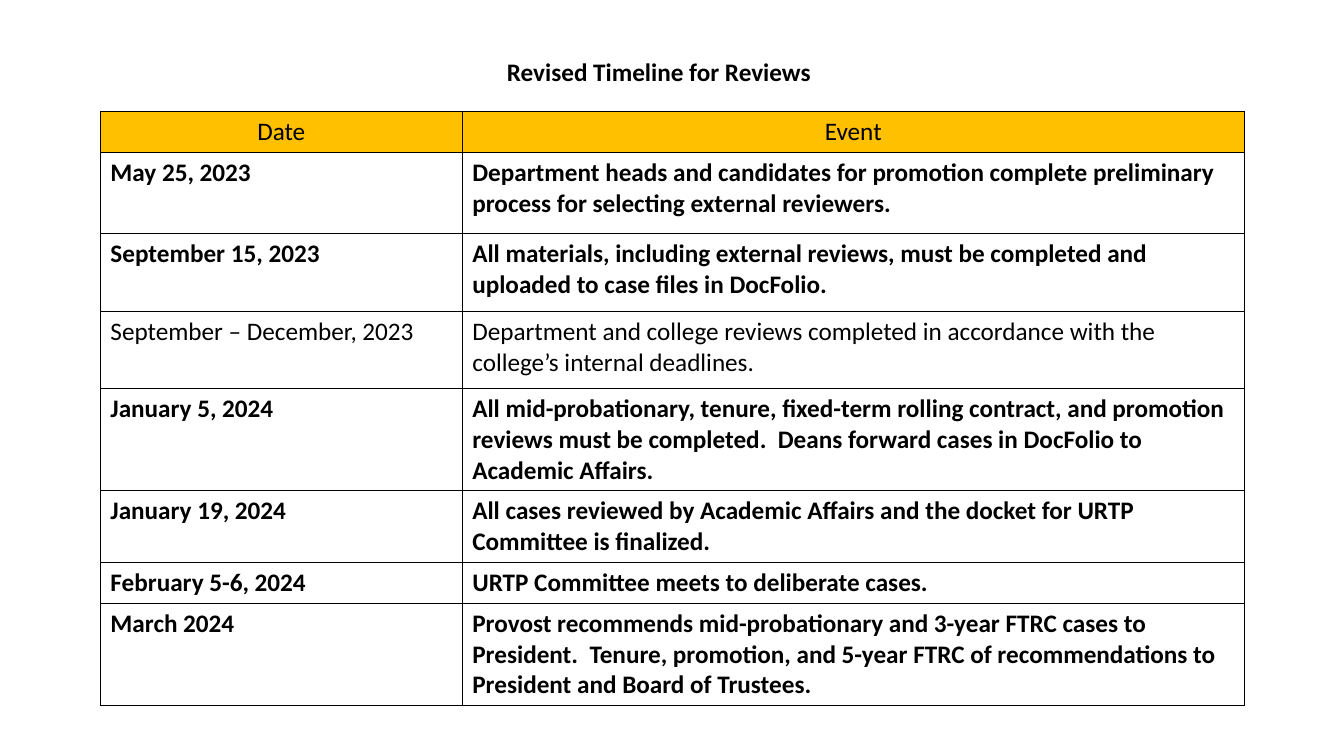
from lxml.etree import SubElement as Sub
from pptx import Presentation
from pptx.dml.color import RGBColor as Rgb
from pptx.enum.text import MSO_ANCHOR as Anchor, PP_ALIGN as Align
from pptx.oxml.ns import qn
from pptx.util import Cm, Pt

HEAD = ("Date", "Event")
# date, event, bold, row height in cm
ROWS = [
    ("May 25, 2023",
     "Department heads and candidates for promotion complete preliminary "
     "process for selecting external reviewers.", True, 2.04),
    ("September 15, 2023",
     "All materials, including external reviews, must be completed and "
     "uploaded to case files in DocFolio.", True, 1.97),
    ("September – December, 2023",
     "Department and college reviews completed in accordance with the "
     "college’s internal deadlines.", False, 1.94),
    ("January 5, 2024",
     "All mid-probationary, tenure, fixed-term rolling contract, and "
     "promotion reviews must be completed.  Deans forward cases in DocFolio "
     "to Academic Affairs.", True, 2.56),
    ("January 19, 2024",
     "All cases reviewed by Academic Affairs and the docket for URTP "
     "Committee is finalized.", True, 1.8),
    ("February 5-6, 2024",
     "URTP Committee meets to deliberate cases.", True, 1.03),
    ("March 2024",
     "Provost recommends mid-probationary and 3-year FTRC cases to "
     "President.  Tenure, promotion, and 5-year FTRC of recommendations to "
     "President and Board of Trustees.", True, 2.56),
]


def color(code):
    return Rgb.from_string(code)


class Deck:
    font, size = "Calibri", Pt(18)
    ink, gold = "000000", "FFC000"

    def __init__(self, slide):
        self.slide = slide

    def text(self, frame, words, bold=False, align=Align.LEFT):
        para = frame.paragraphs[0]
        para.alignment = align
        run = para.add_run()
        run.text = words
        font = run.font
        font.name, font.size, font.bold = self.font, self.size, bold
        font.color.rgb = color(self.ink)

    def title(self, words, left, top, width, height):
        shape = self.slide.shapes.title
        shape.left, shape.top = Cm(left), Cm(top)
        shape.width, shape.height = Cm(width), Cm(height)
        frame = shape.text_frame
        frame.word_wrap = False
        frame.vertical_anchor = Anchor.TOP
        self.text(frame, words, bold=True)

    def border(self, cell):
        """Draw a 1 pt line on all four sides of a cell."""
        props = cell._tc.get_or_add_tcPr()
        for spot, side in enumerate(("lnL", "lnR", "lnT", "lnB")):
            line = Sub(props, qn(f"a:{side}"), w=str(Pt(1)))
            fill = Sub(line, qn("a:solidFill"))
            Sub(fill, qn("a:srgbClr"), val=self.ink)
            props.insert(spot, line)

    def cell(self, cell, words, bold, head):
        if head:
            cell.fill.solid()
            cell.fill.fore_color.rgb = color(self.gold)
        else:
            cell.fill.background()
        self.border(cell)
        self.text(cell.text_frame, words, bold,
                  Align.CENTER if head else Align.LEFT)

    def table(self, rows, left, top, widths):
        """Add a table; each row holds two texts, a bold flag and a height."""
        total = sum(row[-1] for row in rows)
        grid = self.slide.shapes.add_table(
            len(rows), len(widths), Cm(left), Cm(top),
            Cm(sum(widths)), Cm(total)).table
        grid.horz_banding = False
        for col, width in zip(grid.columns, widths):
            col.width = Cm(width)
        for r, (*texts, bold, height) in enumerate(rows):
            grid.rows[r].height = Cm(height)
            for c, words in enumerate(texts):
                self.cell(grid.cell(r, c), words, bold, head=r == 0)


def main():
    prs = Presentation()
    prs.slide_width, prs.slide_height = Cm(33.87), Cm(19.05)
    deck = Deck(prs.slides.add_slide(prs.slide_layouts[5]))
    deck.title("Revised Timeline for Reviews", 12.52, 1.28, 8.23, 1.03)
    deck.table([(*HEAD, False, 1.03)] + ROWS, 2.53, 2.81, (9.12, 19.71))
    prs.save("out.pptx")


if __name__ == "__main__":
    main()
